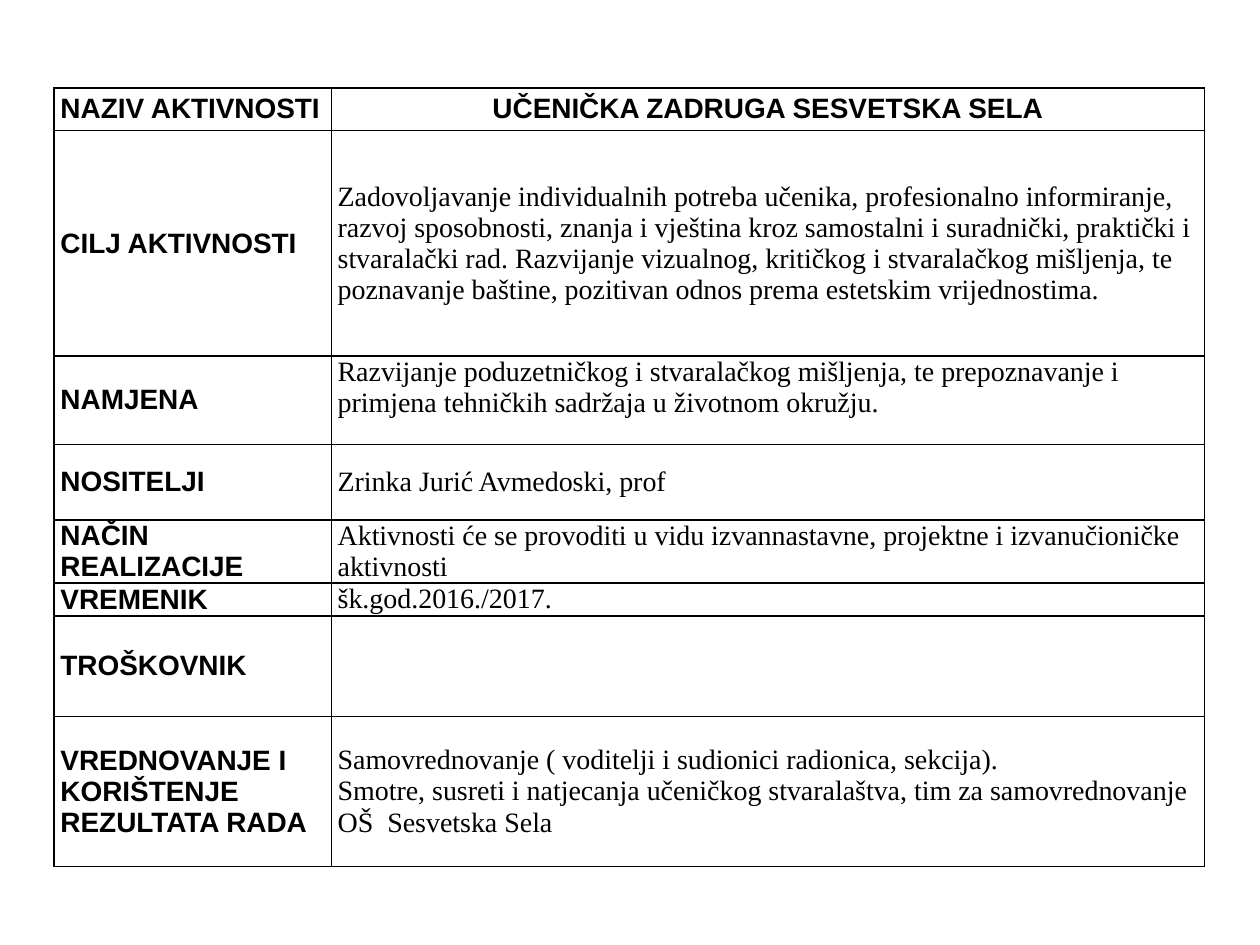
import dataclasses

import pptx
import pptx.dml.color
import pptx.enum.text
import pptx.oxml
import pptx.oxml.ns
import pptx.util


@dataclasses.dataclass(frozen=True)
class Theme:
    """Colours, fonts and type sizes of the slide."""
    ink: str = "000000"
    label_font: str = "Arial"
    body_font: str = "Times New Roman"
    size: int = 16
    border: int = 1
    inset: float = 0.05


@dataclasses.dataclass(frozen=True)
class Box:
    """A region measured in shares of the slide."""
    left: float
    top: float
    width: float
    height: float


THEME = Theme()
PAGE_WIDTH = pptx.util.Inches(10)
PAGE_HEIGHT = pptx.util.Inches(7.5)
TABLE_BOX = Box(0.043, 0.093, 0.913, 0.824)
COLUMN_SHARES = (0.241, 0.759)
HEADER = ("NAZIV AKTIVNOSTI", "UČENIČKA ZADRUGA SESVETSKA SELA")
ROW_WEIGHTS = (34, 179, 70, 60, 50, 26, 80, 119)
DETAILS = (
    ("CILJ AKTIVNOSTI",
     "Zadovoljavanje individualnih potreba učenika, profesionalno informiranje, "
     "razvoj sposobnosti, znanja i vještina kroz samostalni i suradnički, praktički i "
     "stvaralački rad. Razvijanje vizualnog, kritičkog i stvaralačkog mišljenja, te "
     "poznavanje baštine, pozitivan odnos prema estetskim vrijednostima."),
    ("NAMJENA",
     "Razvijanje poduzetničkog i stvaralačkog mišljenja, te prepoznavanje i "
     "primjena tehničkih sadržaja u životnom okružju."),
    ("NOSITELJI", "Zrinka Jurić Avmedoski, prof"),
    ("NAČIN REALIZACIJE",
     "Aktivnosti će se provoditi u vidu izvannastavne, projektne i izvanučioničke aktivnosti"),
    ("VREMENIK", "šk.god.2016./2017."),
    ("TROŠKOVNIK", ""),
    ("VREDNOVANJE I KORIŠTENJE REZULTATA RADA",
     "Samovrednovanje ( voditelji i sudionici radionica, sekcija).\n"
     "Smotre, susreti i natjecanja učeničkog stvaralaštva, tim za samovrednovanje "
     "OŠ  Sesvetska Sela"),
)


def outline_cell(cell):
    """Draw a thin line on all four sides of a cell."""
    properties = cell._tc.get_or_add_tcPr()
    width = pptx.util.Pt(THEME.border)
    for position, side in enumerate(("lnL", "lnR", "lnT", "lnB")):
        line = pptx.oxml.parse_xml(
            f'<a:{side} {pptx.oxml.ns.nsdecls("a")} w="{width}"><a:solidFill>'
            f'<a:srgbClr val="{THEME.ink}"/></a:solidFill></a:{side}>')
        properties.insert(position, line)


def fill_cell(cell, text, heading):
    """Write text into a cell in the label or body style."""
    cell.fill.background()
    outline_cell(cell)
    cell.vertical_anchor = pptx.enum.text.MSO_ANCHOR.MIDDLE
    cell.margin_left = cell.margin_right = pptx.util.Inches(THEME.inset)
    cell.margin_top = cell.margin_bottom = 0
    cell.text_frame.text = text
    for para in cell.text_frame.paragraphs:
        for span in para.runs:
            span.font.name = THEME.label_font if heading else THEME.body_font
            span.font.size = pptx.util.Pt(THEME.size)
            span.font.bold = heading
            span.font.color.rgb = pptx.dml.color.RGBColor.from_string(THEME.ink)


def add_activity_table(page, box):
    """Place the activity plan, one labelled row per topic."""
    width, height = int(box.width * PAGE_WIDTH), int(box.height * PAGE_HEIGHT)
    table = page.shapes.add_table(
        len(ROW_WEIGHTS), len(COLUMN_SHARES), int(box.left * PAGE_WIDTH),
        int(box.top * PAGE_HEIGHT), width, height).table
    table.first_row = table.horz_banding = False
    for column, share in zip(table.columns, COLUMN_SHARES):
        column.width = int(width * share)
    for row, weight in zip(table.rows, ROW_WEIGHTS):
        row.height = int(height * weight / sum(ROW_WEIGHTS))
    for row, (label, detail) in enumerate((HEADER, *DETAILS)):
        fill_cell(table.cell(row, 0), label, heading=True)
        fill_cell(table.cell(row, 1), detail, heading=row == 0)
        if label == "NAMJENA":
            table.cell(row, 1).margin_bottom = pptx.util.Inches(0.2)
    title = table.cell(0, 1).text_frame.paragraphs[0]
    title.alignment = pptx.enum.text.PP_ALIGN.CENTER


def main():
    """Build and save the slide."""
    deck = pptx.Presentation()
    deck.slide_width, deck.slide_height = PAGE_WIDTH, PAGE_HEIGHT
    page = deck.slides.add_slide(deck.slide_layouts[6])
    add_activity_table(page, TABLE_BOX)
    deck.save("out.pptx")


if __name__ == "__main__":
    main()
